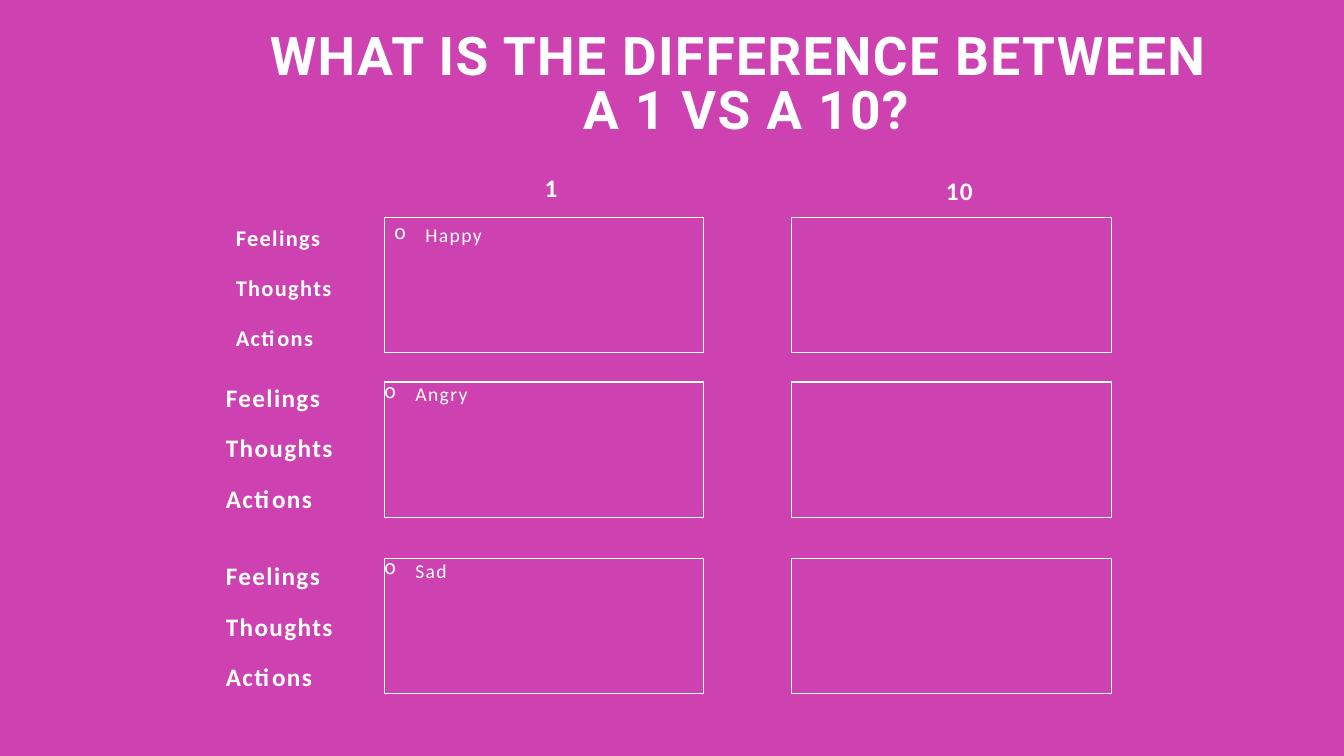
from dataclasses import dataclass

from lxml.etree import SubElement
from pptx import Presentation
from pptx.dml.color import RGBColor
from pptx.enum.shapes import MSO_SHAPE as SHAPE
from pptx.enum.text import MSO_ANCHOR as ANCHOR, MSO_AUTO_SIZE as AUTO, PP_ALIGN as ALIGN
from pptx.oxml.ns import qn
from pptx.util import Inches, Pt

TITLE = "WHAT IS THE DIFFERENCE BETWEEN \vA 1 VS A 10?"
LABELS = ["Feelings", "Thoughts", "Actions"]
# heading, heading left, heading top, box left
COLUMNS = [("1", 4.68, 1.71, 3.81), ("10", 8.73, 1.74, 7.85)]
# example, box top, first label top, label size, padded
ROWS = [
    ("Happy", 2.16, 2.17, 16, True),
    ("Angry", 3.79, 3.79, 18, False),
    ("Sad", 5.54, 5.56, 18, False),
]
LABEL_LEFT, LABEL_STEP = 2.24, 0.5
LABEL_SIZE = (1.57, 0.45)
BOX_SIZE = (3.17, 1.34)
BULLET_INDENT = 0.31


@dataclass(frozen=True)
class Theme:
    background: RGBColor = RGBColor(0xCD, 0x41, 0xB0)
    ink: RGBColor = RGBColor(0xFF, 0xFF, 0xFF)
    title_font: str = "Roboto"
    body_font: str = "Calibri"
    title: int = 38
    heading: int = 18
    example: int = 14
    line: float = 0.75


THEME = Theme()


def write(sp, text, size, font=THEME.body_font, bold=True, align=ALIGN.LEFT,
          padded=False, bullet=False):
    """Fill a shape with one letter-spaced paragraph, anchored at the top."""
    tf = sp.text_frame
    tf.word_wrap = True
    tf.auto_size = AUTO.NONE
    tf.vertical_anchor = ANCHOR.TOP
    if not padded:
        tf.margin_left = tf.margin_right = tf.margin_top = tf.margin_bottom = 0
    p = tf.paragraphs[0]
    p.text = text
    p.alignment = align
    p.space_before = Pt(0)
    if bullet:
        pPr = p._p.get_or_add_pPr()
        pPr.set("marL", str(Inches(BULLET_INDENT)))
        pPr.set("indent", str(-Inches(BULLET_INDENT)))
        SubElement(pPr, qn("a:buChar")).set("char", "o")
    for r in p.runs:
        r.font.name = font
        r.font.size = Pt(size)
        r.font.bold = bold
        r.font.color.rgb = THEME.ink
        r.font._element.set("spc", "100")
    return p


def add_label(s, left, top, text, size, **style):
    sp = s.shapes.add_textbox(*map(Inches, (left, top, *LABEL_SIZE)))
    write(sp, text, size, **style)


def add_box(s, left, top):
    sp = s.shapes.add_shape(SHAPE.RECTANGLE, *map(Inches, (left, top, *BOX_SIZE)))
    sp.shadow.inherit = False
    sp.fill.background()
    sp.line.color.rgb = THEME.ink
    sp.line.width = Pt(THEME.line)
    return sp


def add_title(s):
    sp = s.shapes.title
    sp.left, sp.top, sp.width, sp.height = map(Inches, (1.5, 0.27, 11.8, 0.75))
    p = write(sp, TITLE, THEME.title, font=THEME.title_font, align=ALIGN.CENTER,
              padded=True)
    p.line_spacing = 0.85


def main():
    prs = Presentation()
    prs.slide_width, prs.slide_height = Inches(13.33), Inches(7.5)
    s = prs.slides.add_slide(prs.slide_layouts[5])
    s.background.fill.solid()
    s.background.fill.fore_color.rgb = THEME.background
    add_title(s)

    for heading, left, top, _ in COLUMNS:
        add_label(s, left, top, heading, THEME.heading, align=ALIGN.CENTER)

    for example, box_top, label_top, size, padded in ROWS:
        for i, label in enumerate(LABELS):
            add_label(s, LABEL_LEFT, label_top + i * LABEL_STEP, label, size,
                      padded=padded)
        example_box, _ = [add_box(s, left, box_top) for *_, left in COLUMNS]
        write(example_box, example, THEME.example, bold=False, padded=padded,
              bullet=True)

    prs.save("out.pptx")


if __name__ == "__main__":
    main()
